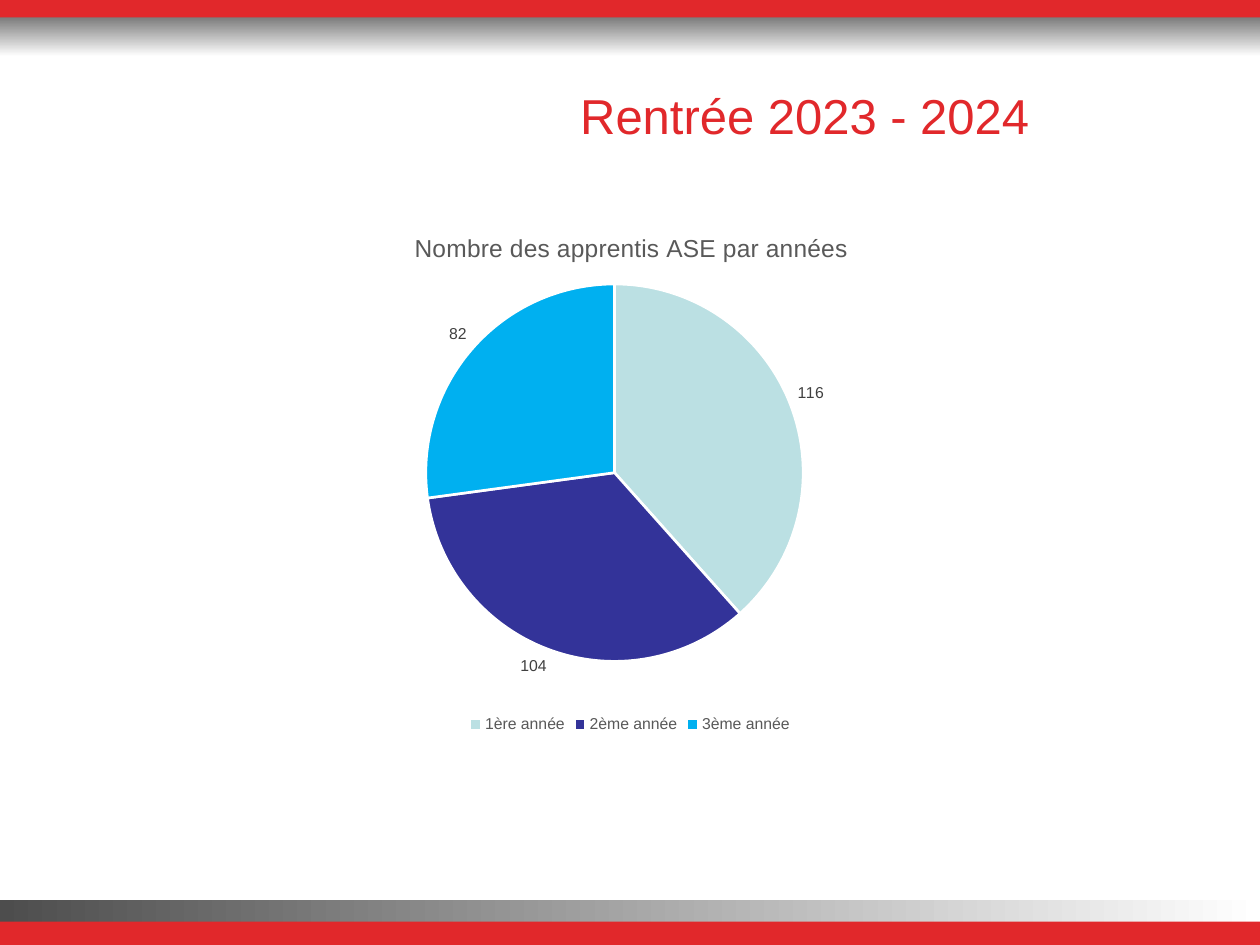
from lxml import etree
from pptx import Presentation
from pptx.chart.data import CategoryChartData
from pptx.dml.color import RGBColor
from pptx.enum import chart as charts, shapes, text
from pptx.oxml import ns
from pptx.util import Cm, Pt

RED = RGBColor(0xE1, 0x28, 0x2B)
WHITE = RGBColor(0xFF, 0xFF, 0xFF)
TOP_GREY = RGBColor(0x5F, 0x5F, 0x5F)
BOTTOM_GREY = RGBColor(0x4D, 0x4D, 0x4D)
TEXT_GREY = RGBColor(0x59, 0x59, 0x59)
LABEL_GREY = RGBColor(0x40, 0x40, 0x40)
PALE_BLUE = RGBColor(0xBB, 0xE0, 0xE3)
NAVY = RGBColor(0x33, 0x33, 0x99)
SKY_BLUE = RGBColor(0x00, 0xB0, 0xF0)

YEARS = [
    ("1ère année", 116, PALE_BLUE),
    ("2ème année", 104, NAVY),
    ("3ème année", 82, SKY_BLUE),
]


class SlideBuilder:
    face = "Arial"

    def __init__(self, slide):
        self.slide = slide

    def style(self, font, size, color):
        font.name = self.face
        font.size = Pt(size)
        font.bold = False
        font.color.rgb = color

    def band(self, box, color, angle=None):
        bar = self.slide.shapes.add_shape(
            shapes.MSO_SHAPE.RECTANGLE, *map(Cm, box))
        bar.shadow.inherit = False
        bar.line.fill.background()
        if angle is None:
            bar.fill.solid()
            bar.fill.fore_color.rgb = color
            return
        bar.fill.gradient()
        bar.fill.gradient_angle = angle
        for stop, shade in zip(bar.fill.gradient_stops, (color, WHITE)):
            stop.color.rgb = shade

    def title(self, box, wording):
        heading = self.slide.shapes.title
        heading.left, heading.top, heading.width, heading.height = map(Cm, box)
        frame = heading.text_frame
        frame.vertical_anchor = text.MSO_ANCHOR.MIDDLE
        frame.word_wrap = True
        line = frame.paragraphs[0]
        line.alignment = text.PP_ALIGN.CENTER
        run = line.add_run()
        run.text = wording
        self.style(run.font, 28, RED)

    def place(self, parent, index, **fractions):
        for old in parent.findall(ns.qn("c:layout")):
            parent.remove(old)
        layout = etree.Element(ns.qn("c:layout"))
        manual = etree.SubElement(layout, ns.qn("c:manualLayout"))
        settings = {"xMode": "edge", "yMode": "edge", **fractions}
        if "w" in fractions:
            settings = {"layoutTarget": "inner", **settings}
        for tag, value in settings.items():
            etree.SubElement(manual, ns.qn(f"c:{tag}")).set("val", str(value))
        parent.insert(index, layout)

    def pie(self, box, heading, years):
        data = CategoryChartData()
        data.categories = [name for name, _, _ in years]
        data.add_series("Series 1", [count for _, count, _ in years])
        chart = self.slide.shapes.add_chart(
            charts.XL_CHART_TYPE.PIE, *map(Cm, box), data).chart
        chart.font.name = self.face
        chart.font.size = Pt(10)

        chart.has_title = True
        run = chart.chart_title.text_frame.paragraphs[0].add_run()
        run.text = heading
        self.style(run.font, 14, TEXT_GREY)
        self.place(chart.chart_title._element, 1, x=0.22, y=0.04)

        chart.has_legend = True
        chart.legend.position = charts.XL_LEGEND_POSITION.BOTTOM
        chart.legend.include_in_layout = False
        self.style(chart.legend.font, 9, TEXT_GREY)

        plot = chart.plots[0]
        plot.vary_by_categories = True
        plot_area = plot._element.getparent()
        self.place(plot_area, 0, x=0.24, y=0.14, w=0.48, h=0.72)
        for index, (_, _, color) in enumerate(years):
            wedge = plot.series[0].points[index].format
            wedge.fill.solid()
            wedge.fill.fore_color.rgb = color
            wedge.line.color.rgb = WHITE
            wedge.line.width = Pt(1.5)

        labels = plot.series[0].data_labels
        labels.show_value = True
        labels.position = charts.XL_LABEL_POSITION.OUTSIDE_END
        self.style(labels.font, 9, LABEL_GREY)


def main():
    deck = Presentation()
    deck.slide_width, deck.slide_height = Cm(25.4), Cm(19.05)
    page = SlideBuilder(deck.slides.add_slide(deck.slide_layouts[5]))
    page.band((0, 0.18, 25.4, 0.96), TOP_GREY, 270)
    page.band((0, 0, 25.4, 0.35), RED)
    page.band((0, 18.15, 25.4, 0.9), BOTTOM_GREY, 0)
    page.band((0, 18.58, 25.4, 0.47), RED)
    page.title((7.72, 1.6, 17, 1.45), "Rentrée 2023 - 2024")
    page.pie((4.78, 4.17, 15.85, 10.72),
             "Nombre des apprentis ASE par années", YEARS)
    deck.save("out.pptx")


if __name__ == "__main__":
    main()
